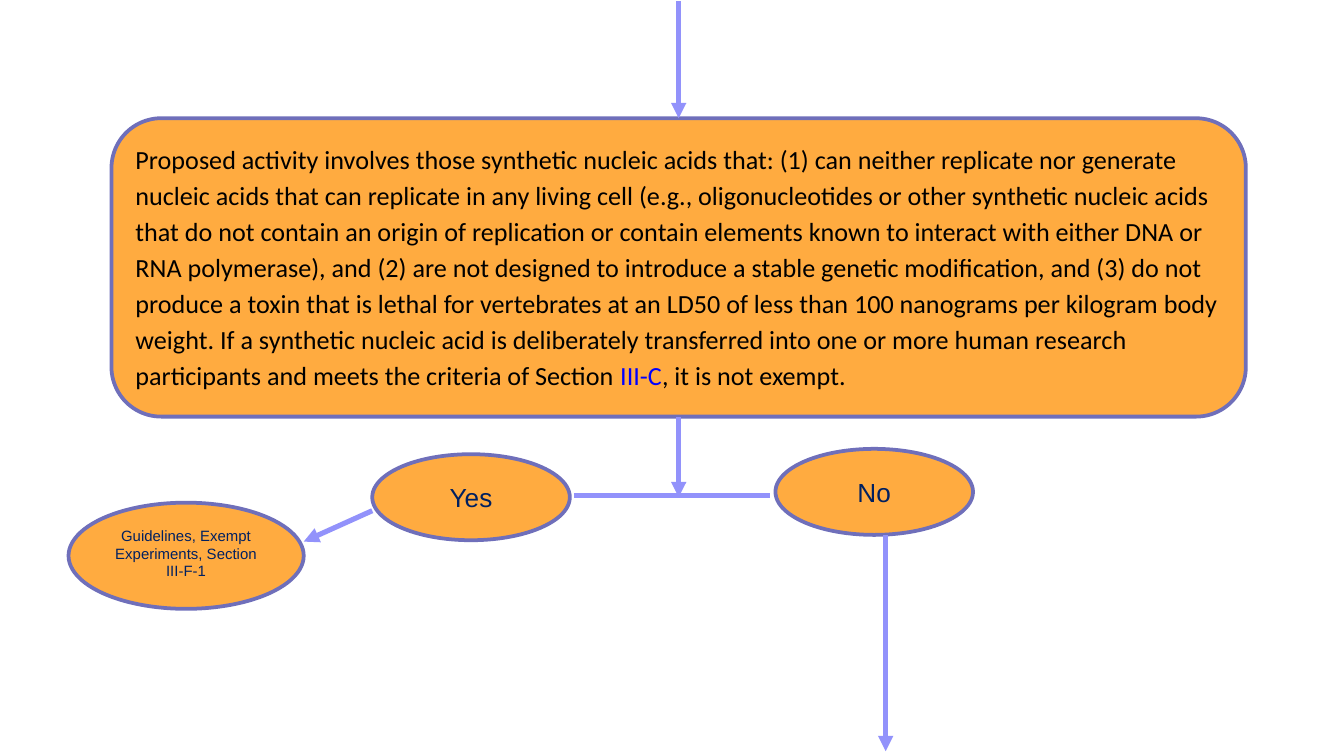
from pptx import Presentation
from pptx.dml.color import RGBColor
from pptx.enum.shapes import MSO_CONNECTOR, MSO_SHAPE
from pptx.enum.text import MSO_ANCHOR, PP_ALIGN
from pptx.oxml.ns import qn
from pptx.util import Inches, Pt
from lxml.etree import SubElement


def color(value):
    return RGBColor.from_string(value)


def add_node(kind, bounds, runs, font_name, size):
    node = slide.shapes.add_shape(kind, *map(Inches, bounds))
    node.shadow.inherit = False
    node.fill.solid()
    node.fill.fore_color.rgb = color("FFAB40")
    node.line.color.rgb = color("6F6FBA")
    node.line.width = Pt(2)
    frame = node.text_frame
    frame.word_wrap = True
    frame.margin_left = frame.margin_right = Inches(0.07)
    frame.margin_top = frame.margin_bottom = Inches(0.04)
    frame.vertical_anchor = MSO_ANCHOR.MIDDLE
    paragraph = frame.paragraphs[0]
    paragraph.alignment = PP_ALIGN.CENTER
    for text, text_color in runs:
        run = paragraph.add_run()
        run.text = text
        run.font.name = font_name
        run.font.size = Pt(size)
        run.font.color.rgb = color(text_color)
    return node


prs = Presentation()
prs.slide_width = Inches(10)
prs.slide_height = Inches(10 * 9 / 16)
slide = prs.slides.add_slide(prs.slide_layouts[6])

criteria_runs = [
    ("Proposed activity involves those synthetic nucleic acids that: (1) can neither "
     "replicate nor generate nucleic acids that can replicate in any living cell (e.g., "
     "oligonucleotides or other synthetic nucleic acids that do not contain an origin of "
     "replication or contain elements known to interact with either DNA or RNA polymerase), "
     "and (2) are not designed to introduce a stable genetic modification, and (3) do not "
     "produce a toxin that is lethal for vertebrates at an LD50 of less than 100 nanograms "
     "per kilogram body weight. If a synthetic nucleic acid is deliberately transferred into "
     "one or more human research participants and meets the criteria of Section ", "000000"),
    ("III-C", "0000FF"),
    (", it is not exempt.", "000000"),
]
criteria = add_node(MSO_SHAPE.ROUNDED_RECTANGLE, (0.83, 0.88, 8.44, 2.22),
                    criteria_runs, "Calibri", 14)
criteria.text_frame.vertical_anchor = MSO_ANCHOR.TOP
criteria.text_frame.paragraphs[0].alignment = PP_ALIGN.LEFT
criteria.text_frame.paragraphs[0].line_spacing = 1.15

guidelines = add_node(MSO_SHAPE.OVAL, (0.51, 3.74, 1.75, 0.79),
                      [("Guidelines, Exempt Experiments, Section III-F-1", "002060")],
                      "Arial", 8)
guidelines.text_frame.margin_bottom = Inches(0.08)

for answer, left, top in [("Yes", 2.77, 3.38), ("No", 5.77, 3.34)]:
    add_node(MSO_SHAPE.OVAL, (left, top, 1.47, 0.64), [(answer, "002060")], "Arial", 14)

flows = [
    ((5.05, 3.1), (5.05, 3.7), True, 2, None),
    ((4.27, 3.69), (5.73, 3.69), False, None, None),
    ((2.77, 3.8), (2.26, 4.03), True, None, None),
    ((6.59, 3.98), (6.59, 5.59), True, None, None),
    ((5.05, 0.01), (5.05, 0.88), True, None, 0),
]
for start, end, has_arrow, leaves_side, enters_side in flows:
    flow = slide.shapes.add_connector(MSO_CONNECTOR.STRAIGHT, *map(Inches, start + end))
    if leaves_side is not None:
        flow.begin_connect(criteria, leaves_side)
    if enters_side is not None:
        flow.end_connect(criteria, enters_side)
    flow.line.color.rgb = color("9292FB")
    flow.line.width = Pt(2.75)
    properties = flow.element.spPr
    if has_arrow:
        SubElement(properties.find(qn("a:ln")), qn("a:tailEnd"), type="triangle")
    SubElement(properties, qn("a:effectLst"))

prs.save("out.pptx")
